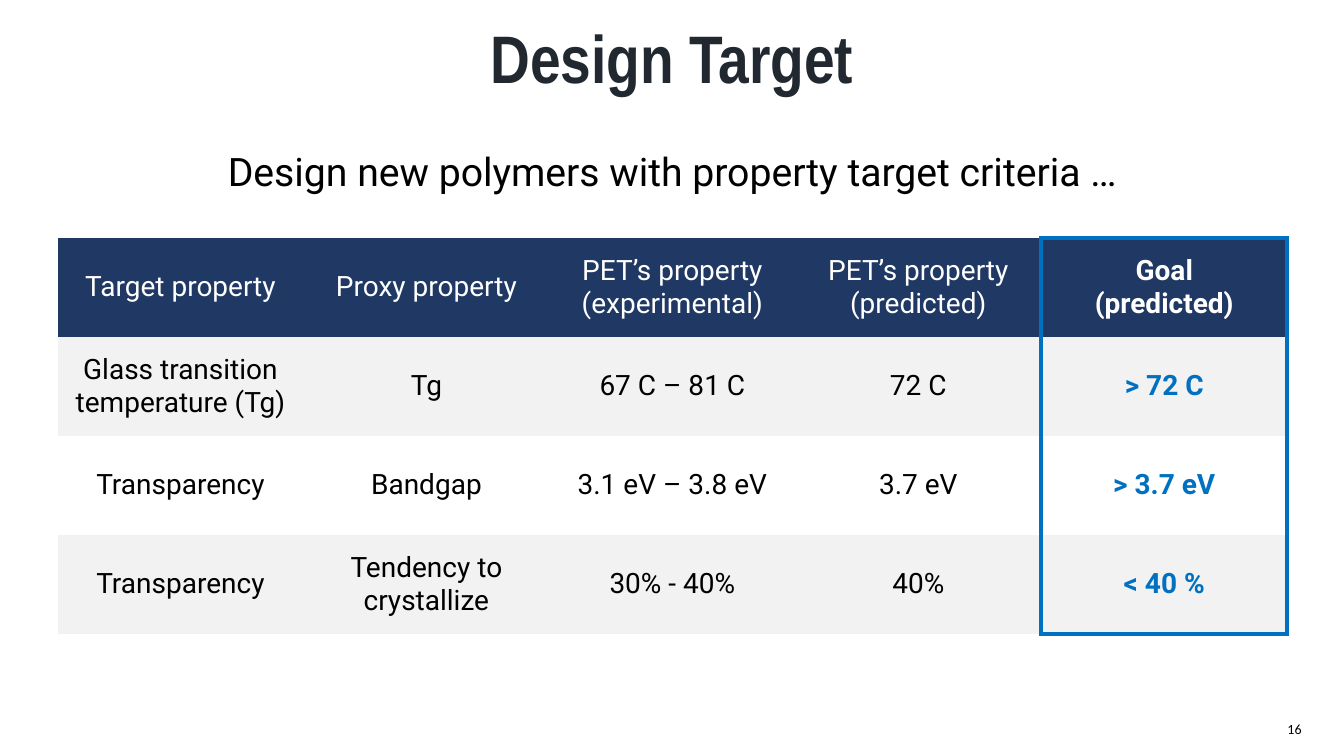
from lxml import etree
from pptx import Presentation
from pptx.dml.color import RGBColor
from pptx.enum.text import MSO_ANCHOR, MSO_AUTO_SIZE, PP_ALIGN
from pptx.oxml.ns import qn
from pptx.util import Cm, Pt

MIDDLE, TOP = MSO_ANCHOR.MIDDLE, MSO_ANCHOR.TOP
CENTER = PP_ALIGN.CENTER
NO_AUTOFIT = MSO_AUTO_SIZE.NONE
TITLE_ONLY = 5
PLAIN_TABLE_STYLE = "{2D5ABB26-0587-4C30-8999-92F81FD0307C}"

BLACK, WHITE, INK = "000000", "FFFFFF", "212830"
NAVY, GREY, BLUE = "203864", "F2F2F2", "0070C0"

PROPERTY_ROWS = [
    ["Target property", "Proxy property", "PET’s property (experimental)",
     "PET’s property (predicted)", "Goal\n(predicted)"],
    ["Glass transition temperature (Tg)", "Tg", "67 C – 81 C", "72 C", "> 72 C"],
    ["Transparency", "Bandgap", "3.1 eV – 3.8 eV", "3.7 eV", "> 3.7 eV"],
    ["Transparency", "Tendency to crystallize", "30% - 40%", "40%", "< 40 %"],
]


def color(value):
    """Turn a hex string into a colour."""
    return RGBColor.from_string(value)


class SlideBuilder:
    """Hold the style and the current slide, and add elements to it."""

    def __init__(self, slide, font="Roboto"):
        """Keep the slide and its main font."""
        self.slide = slide
        self.font = font

    def fill_text(self, frame, text, size, ink=BLACK, bold=False, font=None):
        """Put one centred paragraph into a text frame."""
        paragraph = frame.paragraphs[0]
        paragraph.text = text
        paragraph.alignment = CENTER
        paragraph.font.name = font or self.font
        paragraph.font.size = Pt(size)
        paragraph.font.bold = bold
        paragraph.font.color.rgb = color(ink)
        return paragraph

    def title(self, text, width, height):
        """Place and format the title placeholder."""
        shape = self.slide.shapes.title
        shape.left, shape.top, shape.width, shape.height = 0, 0, width, height
        frame = shape.text_frame
        frame.auto_size = NO_AUTOFIT
        frame.vertical_anchor = MIDDLE
        frame.margin_left = frame.margin_right = Cm(0.76)
        paragraph = self.fill_text(frame, text, 48, INK, True, "Arial Narrow")
        paragraph.line_spacing = 0.9

    def text(self, text, box, size, font=None, anchor=TOP, margins=(0.25, 0.13)):
        """Add a one-line text box."""
        shape = self.slide.shapes.add_textbox(*map(Cm, box))
        frame = shape.text_frame
        frame.word_wrap = False
        frame.vertical_anchor = anchor
        frame.margin_left = frame.margin_right = Cm(margins[0])
        frame.margin_top = frame.margin_bottom = Cm(margins[1])
        self.fill_text(frame, text, size, font=font)

    def border(self, cell, sides):
        """Draw blue borders on the sides of a cell, given in L, R, T, B order."""
        properties = cell._tc.get_or_add_tcPr()
        for index, side in enumerate(sides):
            line = etree.Element(qn(f"a:ln{side}"), w=str(Pt(3)))
            fill = etree.SubElement(line, qn("a:solidFill"))
            etree.SubElement(fill, qn("a:srgbClr"), val=BLUE)
            properties.insert(index, line)

    def table(self, rows, box):
        """Add a banded table with its last column framed."""
        last_row, last_column = len(rows) - 1, len(rows[0]) - 1
        shape = self.slide.shapes.add_table(len(rows), len(rows[0]), *map(Cm, box))
        table = shape.table
        table.horz_banding = False
        table._tbl.tblPr.find(qn("a:tableStyleId")).text = PLAIN_TABLE_STYLE
        for row, texts in enumerate(rows):
            for column, text in enumerate(texts):
                cell = table.cell(row, column)
                is_goal = column == last_column
                ink = WHITE if row == 0 else BLUE if is_goal else BLACK
                cell.vertical_anchor = MIDDLE
                cell.fill.solid()
                cell.fill.fore_color.rgb = color(
                    NAVY if row == 0 else GREY if row % 2 else WHITE)
                self.fill_text(cell.text_frame, text, 20, ink, is_goal)
                if is_goal:
                    edge = "T" if row == 0 else "B" if row == last_row else ""
                    self.border(cell, "LR" + edge)
                elif column == last_column - 1:
                    self.border(cell, "R")


def main():
    """Build the design target slide."""
    presentation = Presentation()
    presentation.slide_width, presentation.slide_height = Cm(33.87), Cm(19.05)
    slide = presentation.slides.add_slide(presentation.slide_layouts[TITLE_ONLY])
    builder = SlideBuilder(slide)
    builder.title("Design Target", presentation.slide_width, Cm(3.12))
    builder.text("16", (32.03, 18.08, 1.19, 0.58), 10, "Calibri", MIDDLE, (0, 0))
    builder.text("Design new polymers with property target criteria …",
                 (5.18, 3.58, 23.52, 1.45), 28)
    builder.table(PROPERTY_ROWS, (1.45, 5.99, 30.99, 9.98))
    presentation.save("out.pptx")


if __name__ == "__main__":
    main()
